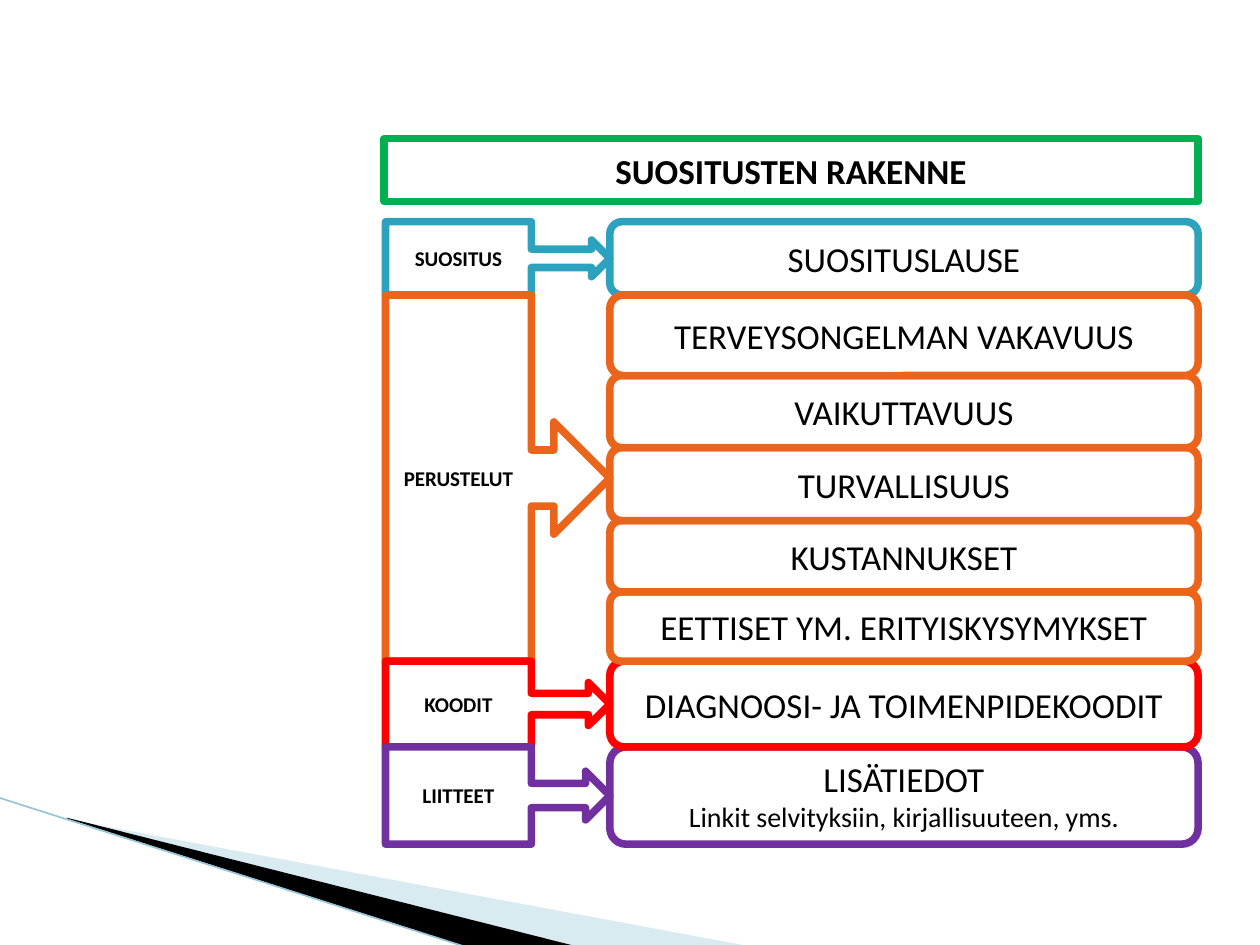
from itertools import accumulate

from lxml.etree import SubElement
from pptx import Presentation
from pptx.dml.color import RGBColor
from pptx.enum.shapes import MSO_CONNECTOR, MSO_SHAPE
from pptx.enum.text import MSO_ANCHOR, PP_ALIGN
from pptx.oxml.ns import qn
from pptx.util import Pt

COLORS = {
    "text": "000000", "box": "FFFFFF", "title": "00B050",
    "teal": "2DA2BF", "orange": "EB641B", "red": "FF0000", "purple": "7030A0",
    "pale": "A0CBDC", "black": "000000", "edge": "97C5D8",
}
TITLE = "SUOSITUSTEN RAKENNE"
# label, colour, rows of (lines of text, height)
SECTIONS = [
    ("SUOSITUS", "teal", [(["SUOSITUSLAUSE"], 41.9)]),
    ("PERUSTELUT", "orange", [
        (["TERVEYSONGELMAN VAKAVUUS"], 46),
        (["VAIKUTTAVUUS"], 41.2),
        (["TURVALLISUUS"], 41.7),
        (["KUSTANNUKSET"], 40.7),
        (["EETTISET YM. ERITYISKYSYMYKSET"], 39.6),
    ]),
    ("KOODIT", "red", [(["DIAGNOOSI- JA TOIMENPIDEKOODIT"], 49)]),
    ("LIITTEET", "purple", [
        (["LISÄTIEDOT", "Linkit selvityksiin, kirjallisuuteen, yms."], 55.6),
    ]),
]
SWOOSHES = [
    ("pale", 40, [(39.6, 468.4), (428.4, 540.7), (328.3, 540.7), (39.6, 468)]),
    ("black", 100, [(38.2, 467.3), (329, 540.7), (267.8, 541.4), (38.9, 468)]),
]
EDGE = [(-0.7, 455.8), (267.1, 541.4)]

FONT = "Calibri"
LINE_WIDTH = 4.33
LABEL_LEFT, LABEL_WIDTH = 220.3, 128.2
ROW_LEFT, ROW_WIDTH = 348.5, 336.2
ROWS_TOP = 126.7
TITLE_BOX = (219.6, 79.2, 465.1, 36)


def rgb(name):
    return RGBColor.from_string(COLORS[name])


def write_text(shape, lines, sizes=(20, 16), bold=False):
    frame = shape.text_frame
    frame.word_wrap = True
    frame.vertical_anchor = MSO_ANCHOR.MIDDLE
    for index, (line, size) in enumerate(zip(lines, sizes)):
        paragraph = frame.add_paragraph() if index else frame.paragraphs[0]
        paragraph.alignment = PP_ALIGN.CENTER
        run = paragraph.add_run()
        run.text = line
        run.font.name = FONT
        run.font.size = Pt(size)
        run.font.bold = bold
        run.font.color.rgb = rgb("text")


def add_box(slide, kind, box, color, lines, adjustments=(), **text_format):
    shape = slide.shapes.add_shape(kind, *map(Pt, box))
    shape.shadow.inherit = False
    for index, value in enumerate(adjustments):
        shape.adjustments[index] = value
    shape.fill.solid()
    shape.fill.fore_color.rgb = rgb("box")
    shape.line.color.rgb = rgb(color)
    shape.line.width = Pt(LINE_WIDTH)
    write_text(shape, lines, **text_format)


def add_swoosh(slide, color, opacity, points):
    start, *others = [(Pt(x), Pt(y)) for x, y in points]
    builder = slide.shapes.build_freeform(*start)
    builder.add_line_segments(others, close=True)
    shape = builder.convert_to_shape()
    shape.shadow.inherit = False
    shape.fill.solid()
    shape.fill.fore_color.rgb = rgb(color)
    shape.line.fill.background()
    if opacity < 100:
        fill_color = shape.fill._xPr.find(".//" + qn("a:srgbClr"))
        SubElement(fill_color, qn("a:alpha"), val=str(opacity * 1000))


def add_edge(slide):
    ends = [Pt(value) for point in EDGE for value in point]
    connector = slide.shapes.add_connector(MSO_CONNECTOR.STRAIGHT, *ends)
    connector.line.color.rgb = rgb("edge")
    connector.line.width = Pt(0.95)
    SubElement(connector._element.spPr, qn("a:effectLst"))


def add_row(slide, top, color, lines, height):
    add_box(slide, MSO_SHAPE.ROUNDED_RECTANGLE,
            (ROW_LEFT, top, ROW_WIDTH, height), color, lines, (0.167,))


def add_label(slide, top, color, label, height):
    add_box(slide, MSO_SHAPE.RIGHT_ARROW_CALLOUT,
            (LABEL_LEFT, top, LABEL_WIDTH, height), color, [label],
            (0.25, 0.25, 0.25, 0.65), sizes=(12,), bold=True)


def main():
    presentation = Presentation()
    presentation.slide_width, presentation.slide_height = Pt(720), Pt(540)
    slide = presentation.slides.add_slide(presentation.slide_layouts[6])

    for swoosh in SWOOSHES:
        add_swoosh(slide, *swoosh)
    add_edge(slide)

    row_data = [(color, lines, height)
                for _, color, section in SECTIONS for lines, height in section]
    row_tops = accumulate((height for *_, height in row_data), initial=ROWS_TOP)
    rows = [(top, *row) for top, row in zip(row_tops, row_data)]

    heights = [sum(height for _, height in section) for *_, section in SECTIONS]
    label_tops = accumulate(heights, initial=ROWS_TOP)
    labels = [(top, color, label, height) for top, (label, color, _), height
              in zip(label_tops, SECTIONS, heights)]

    # The first section lies at the back; each other row overlaps the one below
    add_row(slide, *rows[0])
    add_label(slide, *labels[0])
    add_box(slide, MSO_SHAPE.RECTANGLE, TITLE_BOX, "title", [TITLE], bold=True)
    for row in reversed(rows[1:]):
        add_row(slide, *row)
    for label in labels[1:]:
        add_label(slide, *label)

    presentation.save("out.pptx")


if __name__ == "__main__":
    main()
